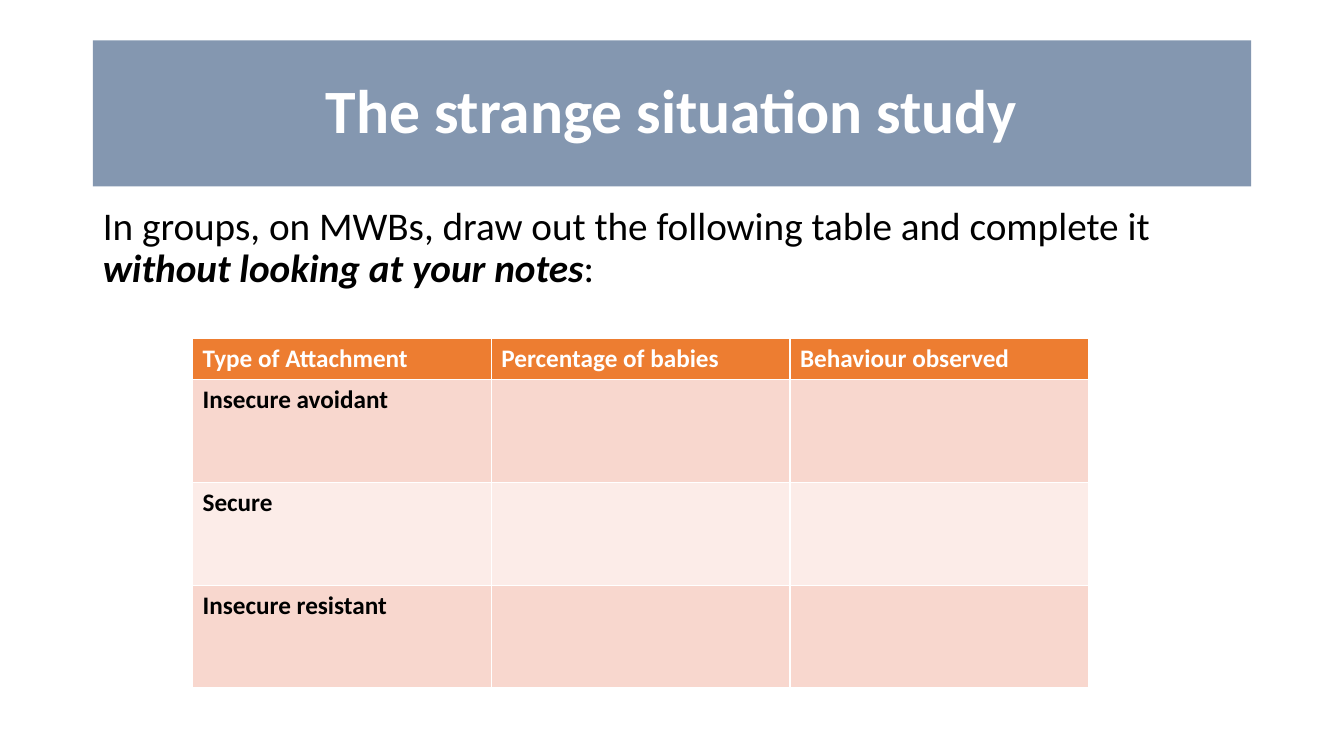
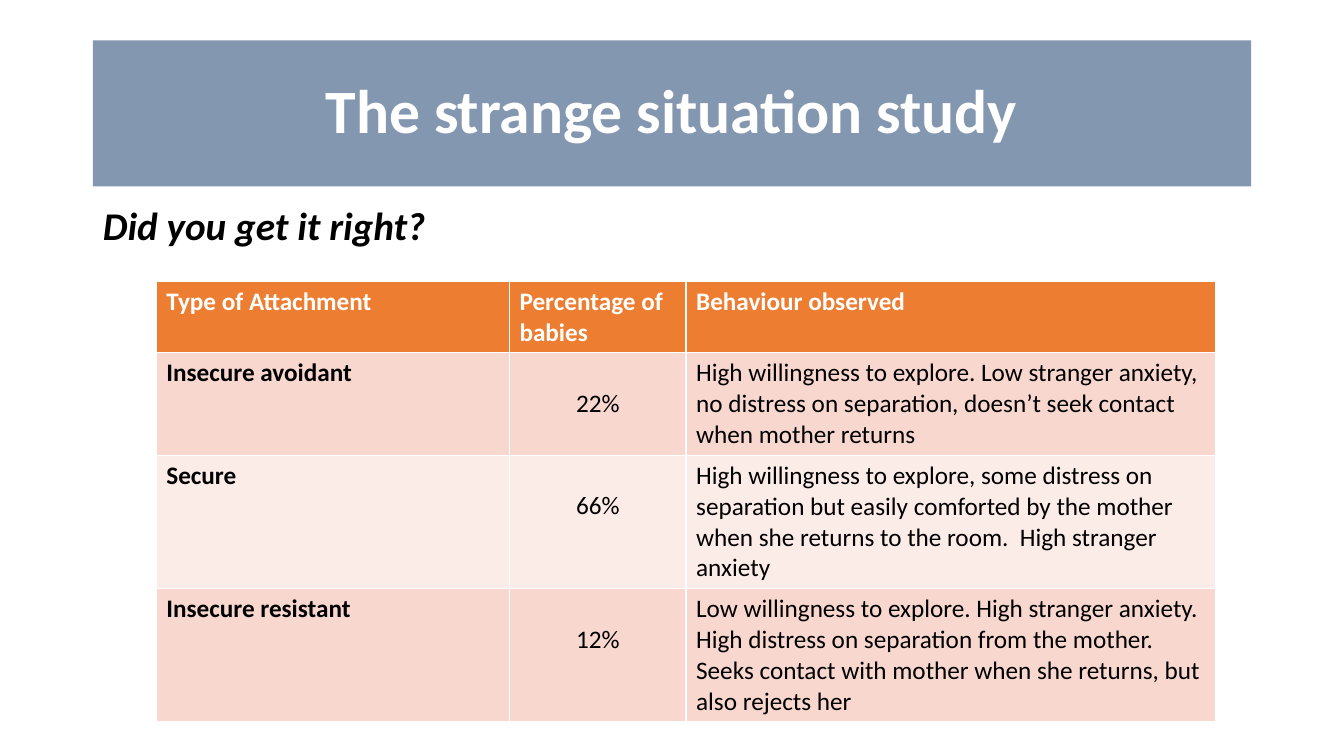
from pptx import Presentation
from pptx.dml.color import RGBColor
from pptx.enum.text import MSO_ANCHOR, PP_ALIGN
from pptx.util import Inches, Pt

WIDE, HIGH = 13.33, 7.5
EDGE = 0.92
SPAN = WIDE - 2 * EDGE
FACE = "Calibri"
HUES = {
    "band": "8497B0",
    "head": "ED7D31",
    "odd": "F8D7CE",
    "even": "FCECE8",
    "light": "FFFFFF",
    "dark": "000000",
}
TITLE = "The strange situation study"
HEADS = ["Type of Attachment", "Percentage of babies", "Behaviour observed"]
TYPES = ["Insecure avoidant", "Secure", "Insecure resistant"]
RATES = ["22%", "66%", "12%"]
NOTES = [
    "High willingness to explore. Low stranger anxiety, no distress on "
    "separation, doesn’t seek contact when mother returns",
    "High willingness to explore, some distress on separation but easily "
    "comforted by the mother when she returns to the room.  High stranger anxiety",
    "Low willingness to explore. High stranger anxiety.  High distress on "
    "separation from the mother.  Seeks contact with mother when she returns, "
    "but also rejects her",
]


def paint(shape, hue):
    shape.fill.solid()
    shape.fill.fore_color.rgb = RGBColor.from_string(HUES[hue])


def style(para, size, hue, bold=None):
    font = para.font
    font.name, font.size, font.bold = FACE, Pt(size), bold
    font.color.rgb = RGBColor.from_string(HUES[hue])


def place(shape, left, top, width, height):
    shape.left, shape.top = Inches(left), Inches(top)
    shape.width, shape.height = Inches(width), Inches(height)


def add_page(deck, prompt):
    """Add a slide with the title band and a prompt of (text, strong) runs."""
    page = deck.slides.add_slide(deck.slide_layouts[1])
    title, body = page.placeholders
    place(title, EDGE, 0.4, SPAN, 1.45)
    paint(title, "band")
    title.text_frame.text = TITLE
    title.text_frame.vertical_anchor = MSO_ANCHOR.MIDDLE
    para = title.text_frame.paragraphs[0]
    para.alignment, para.line_spacing = PP_ALIGN.CENTER, 0.9
    style(para, 44, "light", True)

    place(body, EDGE, 2, SPAN, 4.76)
    para = body.text_frame.paragraphs[0]
    para.line_spacing, para.space_before = 0.9, Pt(10)
    style(para, 28, "dark")
    props = para._p.get_or_add_pPr()
    props.set("marL", "0")
    props.set("indent", "0")
    mark = props.makeelement(
        "{http://schemas.openxmlformats.org/drawingml/2006/main}buNone", {})
    props.find("{*}defRPr").addprevious(mark)
    for text, strong in prompt:
        run = para.add_run()
        run.text = text
        run.font.bold = run.font.italic = strong
    return page


def add_grid(page, left, top, width, shares, heights, rows):
    """Add a table whose columns divide the width by their shares."""
    grid = page.shapes.add_table(
        len(rows), len(shares), Inches(left), Inches(top),
        Inches(width), Inches(sum(heights))).table
    for col, share in zip(grid.columns, shares):
        col.width = Inches(width * share / sum(shares))
    for r, (row, height) in enumerate(zip(rows, heights)):
        grid.rows[r].height = Inches(height)
        for c, text in enumerate(row):
            cell = grid.cell(r, c)
            paint(cell, "head" if r == 0 else "odd" if r % 2 else "even")
            cell.text = text
            para = cell.text_frame.paragraphs[0]
            style(para, 18, "dark" if r else "light", r == 0 or c == 0)
            if r and c == 1:
                para.alignment = PP_ALIGN.CENTER
                cell.margin_top = Inches(0.35)


def main():
    deck = Presentation()
    deck.slide_width, deck.slide_height = Inches(WIDE), Inches(HIGH)

    task = add_page(deck, [
        ("In groups, on MWBs, draw out the following table and complete it ", False),
        ("without looking at your notes", True),
        (":", False),
    ])
    blank = [HEADS] + [[kind, "", ""] for kind in TYPES]
    add_grid(task, 1.91, 3.36, 8.89, [1, 1, 1], [0.4] + [1.02] * 3, blank)

    check = add_page(deck, [("Did you get it right?", True)])
    full = [HEADS, *zip(TYPES, RATES, NOTES)]
    add_grid(check, 1.55, 2.79, 10.51, [2, 1, 3], [0.7, 1.02, 1.32, 1.32], full)

    deck.save("out.pptx")


if __name__ == "__main__":
    main()
